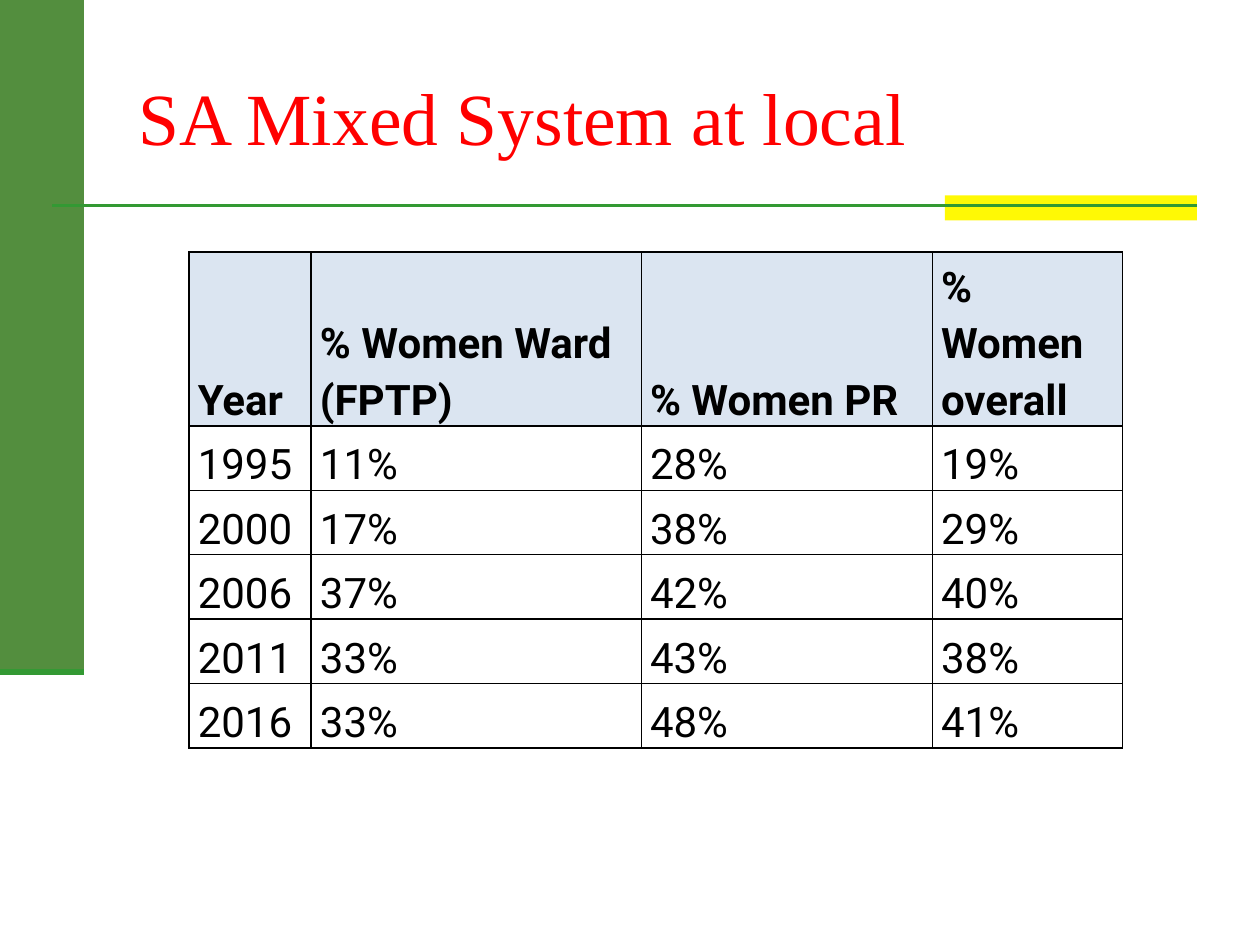
from pptx import Presentation
from pptx.dml.color import RGBColor as RGB
from pptx.enum.shapes import MSO_CONNECTOR as Link, MSO_SHAPE as Form
from pptx.enum.text import MSO_ANCHOR as Anchor, PP_ALIGN as Align
from pptx.oxml.ns import qn
from pptx.util import Inches, Pt
from lxml.etree import SubElement

COLORS = {
    "band": "538E3E",
    "mark": "FFF905",
    "rule": "339933",
    "title": "FF0000",
    "head": "DBE5F1",
    "ink": "000000",
}
HEAD = ["Year", "% Women Ward (FPTP)", "% Women PR", "% Women overall"]
DATA = [
    ["1995", "11%", "28%", "19%"],
    ["2000", "17%", "38%", "29%"],
    ["2006", "37%", "42%", "40%"],
    ["2011", "33%", "43%", "38%"],
    ["2016", "33%", "48%", "41%"],
]


def unit(n):
    """Length of n grid steps; the slide is 120 columns by 90 rows."""
    return Inches(n / 12)


def color(name):
    return RGB.from_string(COLORS[name])


class Deck:
    def __init__(self):
        self.prs = Presentation()
        self.prs.slide_width, self.prs.slide_height = unit(120), unit(90)
        self.slide = self.prs.slides.add_slide(self.prs.slide_layouts[6])
        self.shapes = self.slide.shapes

    def style(self, para, face, size, tint, bold=False):
        font = para.font
        font.name, font.size, font.bold = face, Pt(size), bold
        font.color.rgb = color(tint)

    def block(self, x, y, w, h, tint):
        box = self.shapes.add_shape(Form.RECTANGLE, *map(unit, (x, y, w, h)))
        box.shadow.inherit = False
        box.fill.solid()
        box.fill.fore_color.rgb = color(tint)
        box.line.fill.background()

    def rule(self, x, y, end, width):
        line = self.shapes.add_connector(
            Link.STRAIGHT, unit(x), unit(y), unit(end), unit(y))
        line.line.color.rgb = color("rule")
        line.line.width = Pt(width)
        SubElement(line._element.spPr, qn("a:effectLst"))

    def title(self, x, y, w, h, text):
        frame = self.shapes.add_textbox(*map(unit, (x, y, w, h))).text_frame
        frame.word_wrap = True
        frame.vertical_anchor = Anchor.MIDDLE
        frame.text = text
        self.style(frame.paragraphs[0], "Times New Roman", 42, "title")

    def border(self, cell):
        props = cell._tc.get_or_add_tcPr()
        for side in "LRTB":
            line = SubElement(props, qn(f"a:ln{side}"), w=str(Pt(1)))
            fill = SubElement(line, qn("a:solidFill"))
            SubElement(fill, qn("a:srgbClr"), val=COLORS["ink"])

    def cell(self, cell, text, head, align):
        cell.text = text
        cell.vertical_anchor = Anchor.BOTTOM
        cell.margin_left = cell.margin_right = Inches(0.07)
        cell.margin_top = cell.margin_bottom = 0
        para = cell.text_frame.paragraphs[0]
        para.alignment = align
        para.line_spacing, para.space_after = 1.15, Pt(10)
        self.style(para, "Roboto", 24, "ink", head)
        self.border(cell)
        if head:
            cell.fill.solid()
            cell.fill.fore_color.rgb = color("head")
        else:
            cell.fill.background()

    def table(self, x, y, cols, rows, data):
        """Add a table whose first row is the head; cols and rows are sizes."""
        size = (x, y, sum(cols), sum(rows))
        table = self.shapes.add_table(
            len(rows), len(cols), *map(unit, size)).table
        table.first_row = table.horz_banding = False
        for col, width in zip(table.columns, cols):
            col.width = unit(width)
        for row, height in zip(table.rows, rows):
            row.height = unit(height)
        for r, line in enumerate(data):
            for c, text in enumerate(line):
                align = Align.LEFT if r == 0 and c else Align.JUSTIFY
                self.cell(table.cell(r, c), text, r == 0, align)


def main():
    deck = Deck()
    deck.block(0, 0, 8, 64, "band")
    deck.block(90, 18.6, 24, 2.4, "mark")
    deck.rule(5, 19.6, 114, 1.5)
    deck.rule(0, 64, 8, 3.5)
    deck.title(12, 3.6, 102, 15, "SA Mixed System at local")
    deck.table(18, 24, [11.64, 31.44, 27.72, 18.12],
               [12.24] + [6.14] * len(DATA), [HEAD] + DATA)
    deck.prs.save("out.pptx")


if __name__ == "__main__":
    main()
